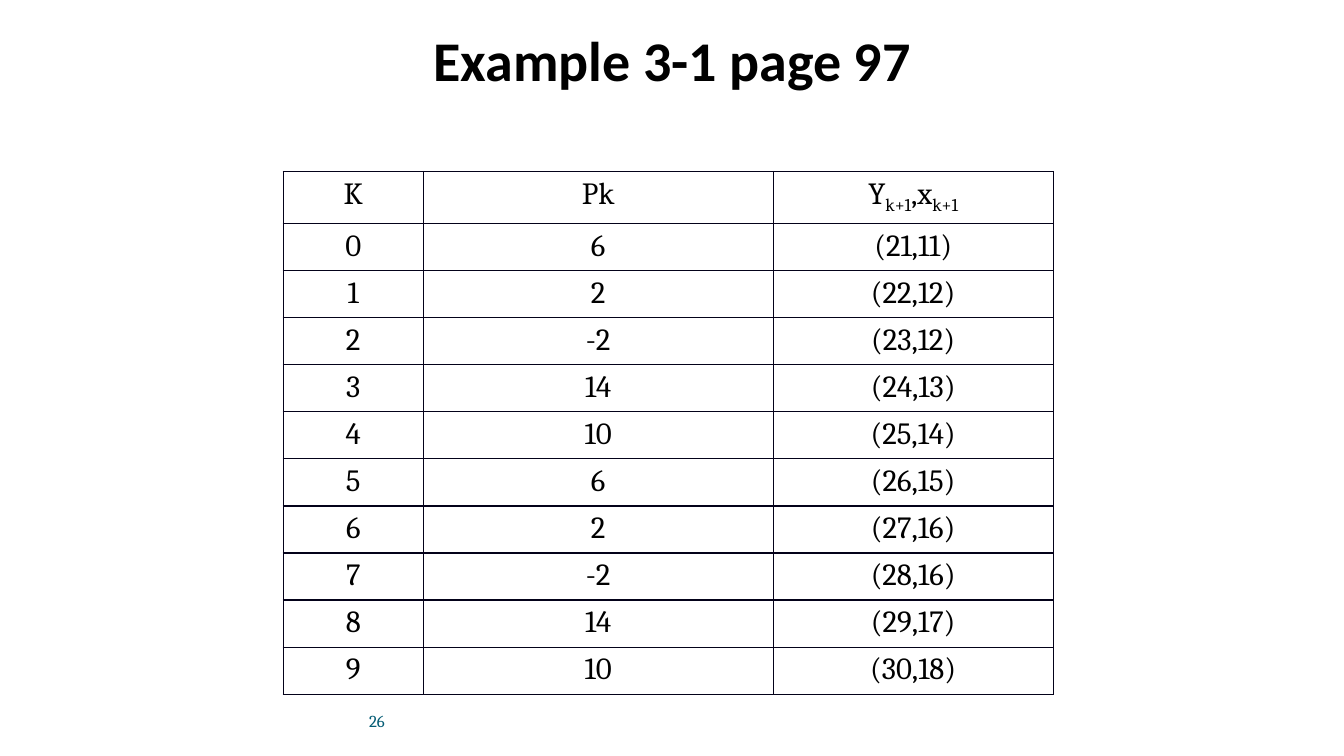
import pptx
import pptx.util
import pptx.dml.color
import pptx.enum.text
import pptx.oxml.ns
import lxml.etree

Pt = pptx.util.Pt
ALIGN = pptx.enum.text.PP_ALIGN
MIDDLE = pptx.enum.text.MSO_ANCHOR.MIDDLE

TITLE = "Example 3-1 page 97"
PAGE_NUMBER = "26"
HEADER = [
    [("K", False)],
    [("Pk", False)],
    [("Y", False), ("k+1", True), (",x", False), ("k+1", True)],
]
STEPS = [
    (6, 21, 11),
    (2, 22, 12),
    (-2, 23, 12),
    (14, 24, 13),
    (10, 25, 14),
    (6, 26, 15),
    (2, 27, 16),
    (-2, 28, 16),
    (14, 29, 17),
    (10, 30, 18),
]
COLUMN_WIDTHS = [100, 250, 200]
ROW_HEIGHT = 33.6
BLACK, TEAL, BORDER = "000000", "045C75", "030119"


def color(value):
    return pptx.dml.color.RGBColor.from_string(value)


def add_span(para, text, size, font, value, bold=False, subscript=False):
    span = para.add_run()
    span.text = text
    span.font.size = Pt(size)
    span.font.name = font
    span.font.bold = bold
    span.font.color.rgb = color(value)
    if subscript:
        span._r.get_or_add_rPr().set("baseline", "-25000")


def add_label(page, left, top, width, height, align):
    box = page.shapes.add_textbox(Pt(left), Pt(top), Pt(width), Pt(height))
    frame = box.text_frame
    frame.word_wrap = True
    frame.vertical_anchor = MIDDLE
    para = frame.paragraphs[0]
    para.alignment = align
    return para


def add_borders(cell):
    properties = cell._tc.get_or_add_tcPr()
    qn = pptx.oxml.ns.qn
    for side in ("a:lnL", "a:lnR", "a:lnT", "a:lnB"):
        line = lxml.etree.SubElement(properties, qn(side), w=str(Pt(1)))
        fill = lxml.etree.SubElement(line, qn("a:solidFill"))
        lxml.etree.SubElement(fill, qn("a:srgbClr"), val=BORDER)


def add_steps_table(page):
    rows = [HEADER] + [
        [[(str(k), False)], [(str(p), False)], [(f"({y},{x})", False)]]
        for k, (p, y, x) in enumerate(STEPS)
    ]
    table = page.shapes.add_table(
        len(rows), len(COLUMN_WIDTHS), Pt(202.3), Pt(122.4),
        Pt(sum(COLUMN_WIDTHS)), Pt(ROW_HEIGHT * len(rows)),
    ).table
    table.first_row = False
    table.horz_banding = False
    for column, width in zip(table.columns, COLUMN_WIDTHS):
        column.width = Pt(width)
    for row, contents in zip(table.rows, rows):
        row.height = Pt(ROW_HEIGHT)
        for cell, spans in zip(row.cells, contents):
            add_borders(cell)
            cell.fill.background()
            para = cell.text_frame.paragraphs[0]
            para.alignment = ALIGN.CENTER
            for text, subscript in spans:
                add_span(para, text, 22, "Cambria", BLACK, subscript=subscript)


def main():
    deck = pptx.Presentation()
    deck.slide_width, deck.slide_height = Pt(960), Pt(540)
    page = deck.slides.add_slide(deck.slide_layouts[6])

    number = add_label(page, 66, 500.5, 216, 28.8, ALIGN.RIGHT)
    add_span(number, PAGE_NUMBER, 12, "Cambria", TEAL)
    title = add_label(page, 174, 0, 612, 90, ALIGN.CENTER)
    title.line_spacing = 0.9
    add_span(title, TITLE, 40, "Calibri", BLACK, bold=True)
    add_steps_table(page)

    deck.save("out.pptx")


if __name__ == "__main__":
    main()
